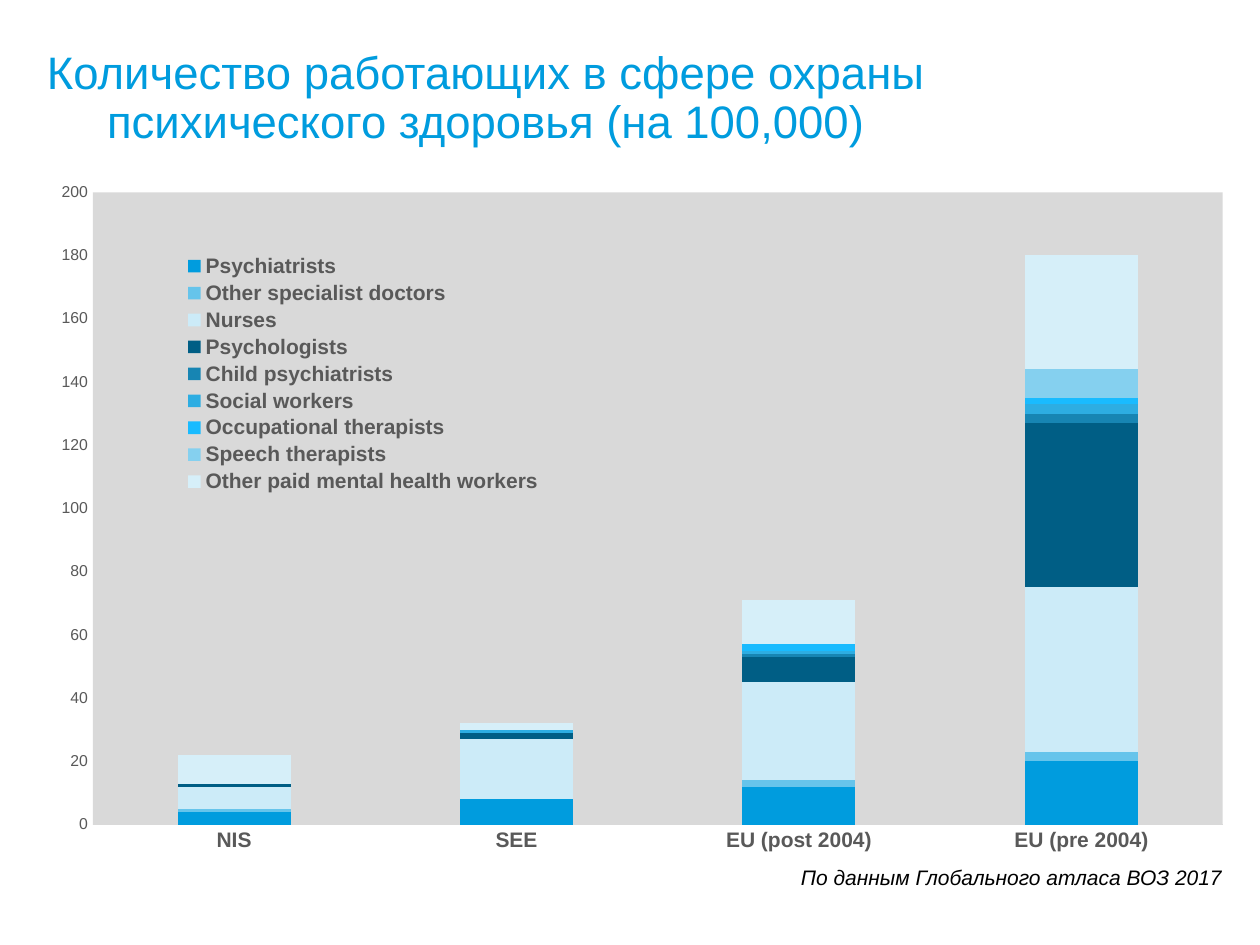
import pptx
import pptx.chart.data
import pptx.dml.color
import pptx.enum.chart
import pptx.enum.text
import pptx.oxml
import pptx.oxml.ns
import pptx.util

RGB = pptx.dml.color.RGBColor
BLUE = RGB(0x00, 0x9C, 0xDE)
BLACK = RGB(0, 0, 0)
DARK_GREY = RGB(0x59, 0x59, 0x59)
LIGHT_GREY = RGB(0xD9, 0xD9, 0xD9)

# Content
TITLE = "Количество работающих в сфере охраны психического здоровья (на 100,000)"
SOURCE = "По данным Глобального атласа ВОЗ 2017"
REGIONS = ["NIS", "SEE", "EU (post 2004)", "EU (pre 2004)"]
WORKERS = [
    ("Psychiatrists", (4, 8, 12, 20), BLUE),
    ("Other specialist doctors", (1, 0, 2, 3), RGB(0x66, 0xC4, 0xEB)),
    ("Nurses", (7, 19, 31, 52), RGB(0xCC, 0xEB, 0xF8)),
    ("Psychologists", (1, 2, 8, 52), RGB(0x00, 0x5E, 0x85)),
    ("Child psychiatrists", (0, 0, 1, 3), RGB(0x17, 0x85, 0xB3)),
    ("Social workers", (0, 1, 1, 3), RGB(0x2D, 0xAD, 0xE2)),
    ("Occupational therapists", (0, 0, 2, 2), RGB(0x19, 0xBB, 0xFF)),
    ("Speech therapists", (0, 0, 0, 9), RGB(0x85, 0xD0, 0xEF)),
    ("Other paid mental health workers", (9, 2, 14, 36), RGB(0xD6, 0xEF, 0xF9)),
]

# Places in inches; layouts as shares of the chart
LEFT, RIGHT = 0.26, 9.8
TITLE_TOP, CHART_TOP, CHART_BOTTOM = 0.39, 1.18, 6.95
PLOT_LAYOUT = {"x": 0.05, "y": 0.06, "w": 0.94, "h": 0.87}
LEGEND_LAYOUT = {"x": 0.12, "y": 0.14, "w": 0.31, "h": 0.34}


def inches(*lengths):
    return [pptx.util.Inches(length) for length in lengths]


def set_font(font, size, color, **formats):
    values = {"name": "Arial", "size": pptx.util.Pt(size), **formats}
    for name, value in values.items():
        setattr(font, name, value)
    font.color.rgb = color


def layout_element(shares, inner=False):
    target = '<c:layoutTarget val="inner"/>' if inner else ""
    modes = "".join(f'<c:{axis}Mode val="edge"/>' for axis in "xy")
    places = "".join(f'<c:{key} val="{share}"/>' for key, share in shares.items())
    return pptx.oxml.parse_xml(
        f'<c:layout {pptx.oxml.ns.nsdecls("c")}><c:manualLayout>'
        f"{target}{modes}{places}</c:manualLayout></c:layout>")


def replace_layout(parent, layout, after=None):
    for old in parent.findall(pptx.oxml.ns.qn("c:layout")):
        parent.remove(old)
    if after is None:
        parent.insert(0, layout)
    else:
        after.addnext(layout)


def add_title(slide):
    title = slide.shapes.title
    title.left, title.top, title.width, title.height = inches(
        LEFT, TITLE_TOP, 7.57, CHART_TOP - TITLE_TOP)
    frame = title.text_frame
    frame.text = TITLE
    formats = {
        "auto_size": pptx.enum.text.MSO_AUTO_SIZE.NONE,
        "word_wrap": True,
        "vertical_anchor": pptx.enum.text.MSO_ANCHOR.BOTTOM,
    }
    for name, value in formats.items():
        setattr(frame, name, value)
    (frame.margin_left, frame.margin_top,
     frame.margin_right, frame.margin_bottom) = inches(0.02, 0, 0.39, 0)
    para = frame.paragraphs[0]
    para.alignment = pptx.enum.text.PP_ALIGN.CENTER
    para.line_spacing = 0.9
    set_font(para.runs[0].font, 26, BLUE)


def add_workers_chart(slide):
    data = pptx.chart.data.CategoryChartData()
    data.categories = REGIONS
    for name, values, _ in WORKERS:
        data.add_series(name, values)
    chart = slide.shapes.add_chart(
        pptx.enum.chart.XL_CHART_TYPE.COLUMN_STACKED,
        *inches(LEFT, CHART_TOP, RIGHT - LEFT, CHART_BOTTOM - CHART_TOP), data).chart
    chart.has_title = False
    set_font(chart.font, 10, BLACK)

    # Columns
    plot = chart.plots[0]
    plot.gap_width, plot.overlap, plot.vary_by_categories = 150, 100, False
    for series, (_, _, color) in zip(plot.series, WORKERS):
        series.format.fill.solid()
        series.format.fill.fore_color.rgb = color

    # Axes
    regions, counts = chart.category_axis, chart.value_axis
    for axis in (regions, counts):
        axis.major_tick_mark = axis.minor_tick_mark = pptx.enum.chart.XL_TICK_MARK.NONE
        axis.has_major_gridlines = False
    set_font(regions.tick_labels.font, 12, DARK_GREY, bold=True)
    regions.format.line.color.rgb = LIGHT_GREY
    regions.format.line.width = pptx.util.Pt(0.75)
    set_font(counts.tick_labels.font, 9, DARK_GREY, bold=False)
    counts.tick_labels.number_format = "###0"
    counts.tick_labels.number_format_is_linked = False
    counts.minimum_scale, counts.maximum_scale, counts.major_unit = 0, 200, 20
    counts.format.line.fill.background()

    # Legend over the plot
    chart.has_legend = True
    legend = chart.legend
    legend.position = pptx.enum.chart.XL_LEGEND_POSITION.BOTTOM
    legend.include_in_layout = False
    set_font(legend.font, 12, DARK_GREY, bold=True)
    legend_xml = chart.element.find(".//" + pptx.oxml.ns.qn("c:legend"))
    replace_layout(legend_xml, layout_element(LEGEND_LAYOUT),
                   legend_xml.find(pptx.oxml.ns.qn("c:legendPos")))

    # Plot area
    area = chart.element.find(".//" + pptx.oxml.ns.qn("c:plotArea"))
    replace_layout(area, layout_element(PLOT_LAYOUT, inner=True))
    area.append(pptx.oxml.parse_xml(
        f'<c:spPr {pptx.oxml.ns.nsdecls("c", "a")}><a:solidFill>'
        f'<a:srgbClr val="{LIGHT_GREY}"/></a:solidFill>'
        "<a:ln><a:noFill/></a:ln></c:spPr>"))


def add_source(slide):
    box = slide.shapes.add_textbox(*inches(0.6, 6.81, RIGHT - 0.6, 0.3))
    box.text_frame.word_wrap = True
    para = box.text_frame.paragraphs[0]
    para.alignment = pptx.enum.text.PP_ALIGN.RIGHT
    span = para.add_run()
    span.text = SOURCE
    set_font(span.font, 12, BLACK, italic=True)


def main():
    deck = pptx.Presentation()
    deck.slide_width, deck.slide_height = inches(10, 7.5)
    slide = deck.slides.add_slide(deck.slide_layouts.get_by_name("Title Only"))
    add_title(slide)
    add_workers_chart(slide)
    add_source(slide)
    deck.save("out.pptx")


if __name__ == "__main__":
    main()
